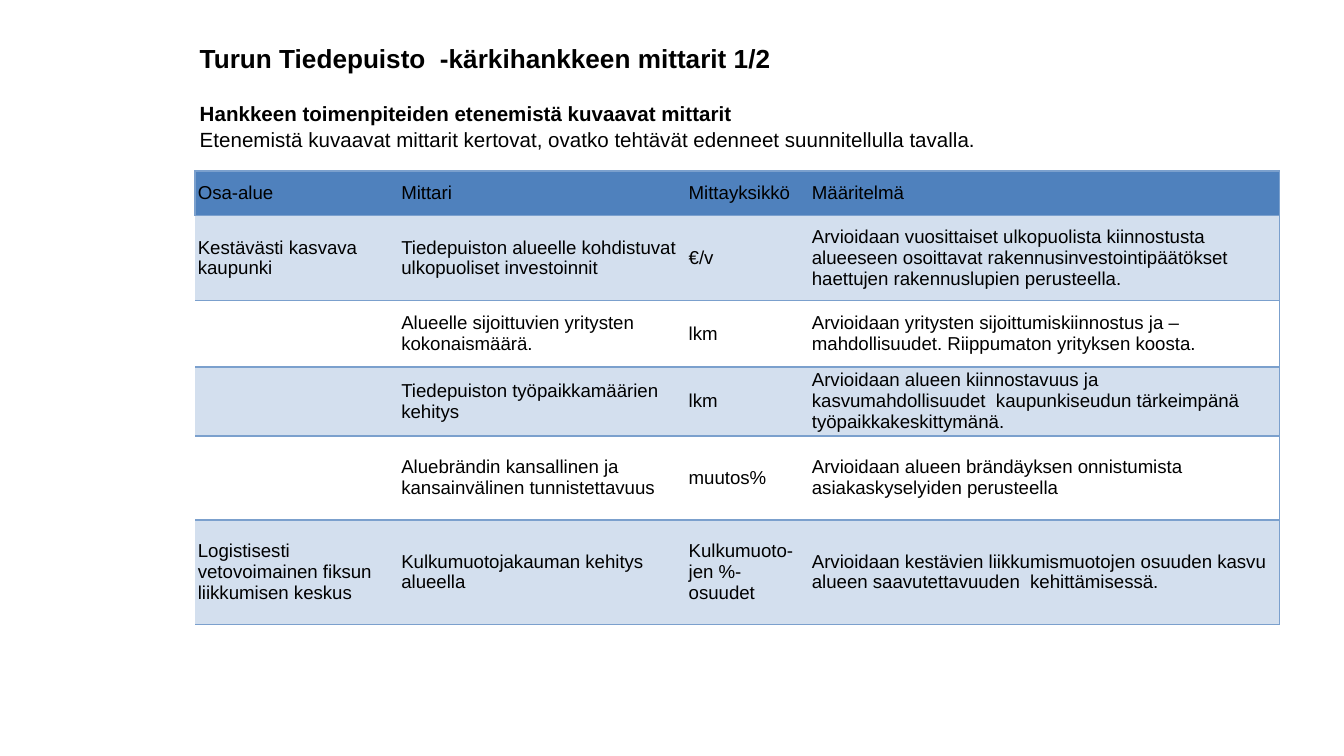
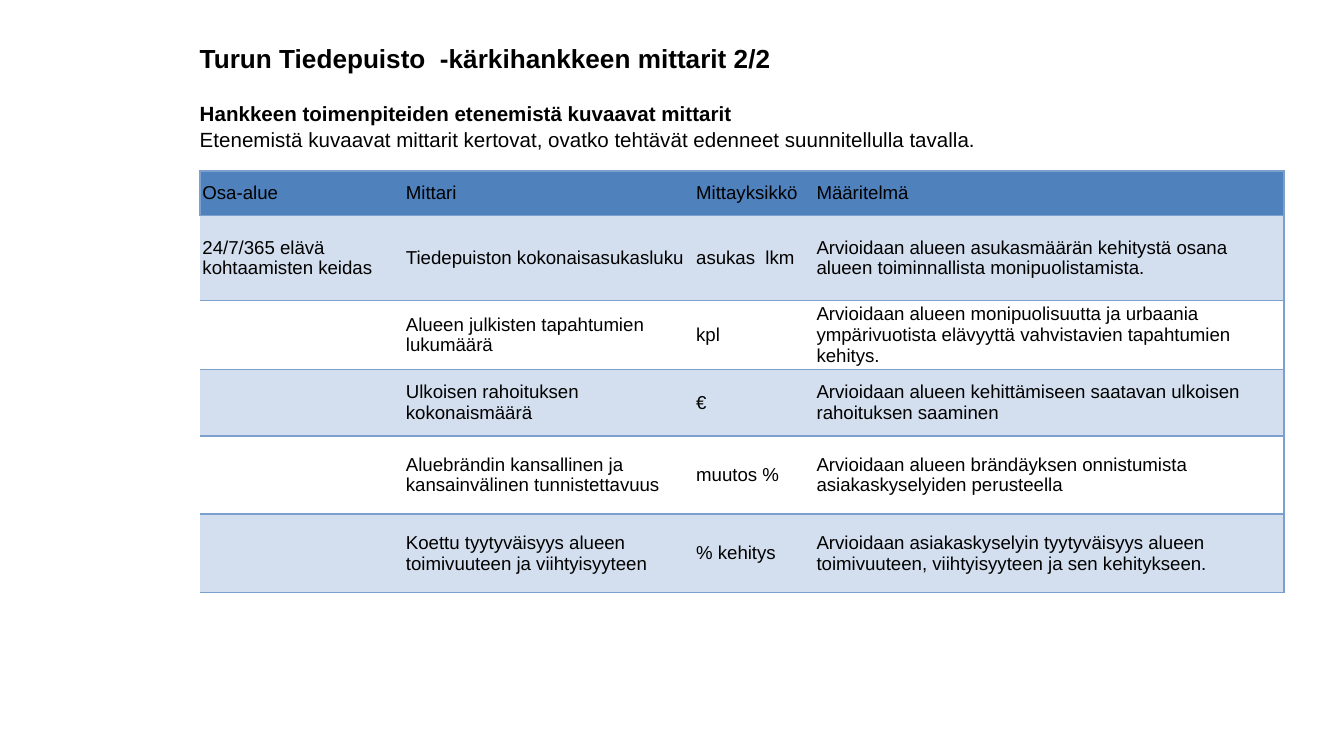
from lxml.etree import SubElement
from pptx import Presentation
from pptx.dml.color import RGBColor
from pptx.enum.text import MSO_ANCHOR
from pptx.oxml.ns import qn
from pptx.util import Pt

HEADER_BLUE = RGBColor(0x4F, 0x81, 0xBD)
BAND_BLUE = RGBColor(0xD3, 0xDF, 0xEE)
LINE_BLUE = RGBColor(0x7B, 0xA0, 0xCD)
BLACK = RGBColor(0, 0, 0)
FONT = "Arial"

COLUMN_HEADS = ["Osa-alue", "Mittari", "Mittayksikkö", "Määritelmä"]
BRAND_METRIC = "Aluebrändin kansallinen ja kansainvälinen tunnistettavuus"
BRAND_DEFINITION = "Arvioidaan alueen brändäyksen onnistumista asiakaskyselyiden perusteella"

PAGES = [
    {
        "left": 104.5,
        "columns": [109, 154, 66, 252],
        "heights": [24, 45.5, 35.5, 35.5, 45, 56],
        "metrics": [
            ["Kestävästi kasvava kaupunki",
             "Tiedepuiston alueelle kohdistuvat ulkopuoliset investoinnit",
             "€/v",
             "Arvioidaan vuosittaiset ulkopuolista kiinnostusta alueeseen osoittavat "
             "rakennusinvestointipäätökset haettujen rakennuslupien perusteella."],
            ["", "Alueelle sijoittuvien yritysten kokonaismäärä.", "lkm",
             "Arvioidaan yritysten sijoittumiskiinnostus ja –mahdollisuudet. "
             "Riippumaton yrityksen koosta."],
            ["", "Tiedepuiston työpaikkamäärien kehitys", "lkm",
             "Arvioidaan alueen kiinnostavuus ja kasvumahdollisuudet  kaupunkiseudun "
             "tärkeimpänä työpaikkakeskittymänä."],
            ["", BRAND_METRIC, "muutos%", BRAND_DEFINITION],
            ["Logistisesti vetovoimainen fiksun liikkumisen keskus",
             "Kulkumuotojakauman kehitys alueella",
             "Kulkumuoto-jen %-osuudet",
             "Arvioidaan kestävien liikkumismuotojen osuuden kasvu alueen "
             "saavutettavuuden  kehittämisessä."],
        ],
    },
    {
        "left": 107,
        "columns": [109, 155.5, 64.5, 252],
        "heights": [24, 45.5, 37, 35.5, 42, 42],
        "metrics": [
            ["24/7/365 elävä\nkohtaamisten keidas",
             "Tiedepuiston kokonaisasukasluku",
             "asukas  lkm",
             "Arvioidaan alueen asukasmäärän kehitystä osana alueen toiminnallista "
             "monipuolistamista."],
            ["", "Alueen julkisten tapahtumien lukumäärä", "kpl",
             "Arvioidaan alueen monipuolisuutta ja urbaania ympärivuotista elävyyttä "
             "vahvistavien tapahtumien kehitys."],
            ["", "Ulkoisen rahoituksen kokonaismäärä", "€",
             "Arvioidaan alueen kehittämiseen saatavan ulkoisen rahoituksen saaminen"],
            ["", BRAND_METRIC, "muutos %", BRAND_DEFINITION],
            ["", "Koettu tyytyväisyys alueen toimivuuteen ja viihtyisyyteen", "% kehitys",
             "Arvioidaan asiakaskyselyin tyytyväisyys alueen toimivuuteen, "
             "viihtyisyyteen ja sen kehitykseen."],
        ],
    },
]


def set_font(paragraph, size, bold=False):
    paragraph.font.name = FONT
    paragraph.font.size = Pt(size)
    paragraph.font.bold = bold
    paragraph.font.color.rgb = BLACK


def set_borders(cell, sides):
    """Draw a 1 pt line on the given sides (L, R, T, B) and none on the others.

    Call before setting the fill, which must follow the lines in the XML.
    """
    properties = cell._tc.get_or_add_tcPr()
    for side in "LRTB":
        line = SubElement(properties, qn(f"a:ln{side}"), w=str(Pt(1)))
        if side in sides:
            fill = SubElement(line, qn("a:solidFill"))
            SubElement(fill, qn("a:srgbClr"), val=str(LINE_BLUE))
        else:
            SubElement(line, qn("a:noFill"))


prs = Presentation()
prs.slide_width = Pt(720)
prs.slide_height = Pt(405)

for number, page in enumerate(PAGES, start=1):
    slide = prs.slides.add_slide(prs.slide_layouts[6])

    heading = slide.shapes.add_textbox(Pt(17), Pt(16.5), Pt(531), Pt(80.5)).text_frame
    heading.word_wrap = True
    heading.vertical_anchor = MSO_ANCHOR.TOP
    heading.margin_left = Pt(90)
    heading.margin_right = heading.margin_top = heading.margin_bottom = Pt(5)
    heading.text = (
        f"Turun Tiedepuisto  -kärkihankkeen mittarit {number}/{len(PAGES)}\n"
        "Hankkeen toimenpiteiden etenemistä kuvaavat mittarit\n"
        "Etenemistä kuvaavat mittarit kertovat, ovatko tehtävät edenneet "
        "suunnitellulla tavalla."
    )
    title, subtitle, explanation = heading.paragraphs
    set_font(title, 14, bold=True)
    set_font(subtitle, 11, bold=True)
    set_font(explanation, 11)
    subtitle.space_before = Pt(13.5)
    for paragraph in heading.paragraphs:
        paragraph.line_spacing = 1.07

    rows = [COLUMN_HEADS] + page["metrics"]
    table = slide.shapes.add_table(
        len(rows), len(COLUMN_HEADS), Pt(page["left"]), Pt(91.5),
        Pt(sum(page["columns"])), Pt(sum(page["heights"])),
    ).table
    for column, width in zip(table.columns, page["columns"]):
        column.width = Pt(width)

    for r, (texts, height) in enumerate(zip(rows, page["heights"])):
        table.rows[r].height = Pt(height)
        for c, text in enumerate(texts):
            cell = table.cell(r, c)
            sides = "TB"
            if r == 0 and c == 0:
                sides += "L"
            if c == len(texts) - 1:
                sides += "R"
            set_borders(cell, sides)
            if r == 0:
                cell.fill.solid()
                cell.fill.fore_color.rgb = HEADER_BLUE
            elif r % 2:
                cell.fill.solid()
                cell.fill.fore_color.rgb = BAND_BLUE
            else:
                cell.fill.background()
            cell.vertical_anchor = MSO_ANCHOR.MIDDLE
            cell.margin_left = cell.margin_right = Pt(1.5)
            cell.margin_top = cell.margin_bottom = Pt(0.5)
            cell.text = text
            for paragraph in cell.text_frame.paragraphs:
                set_font(paragraph, 10)

prs.save("out.pptx")
